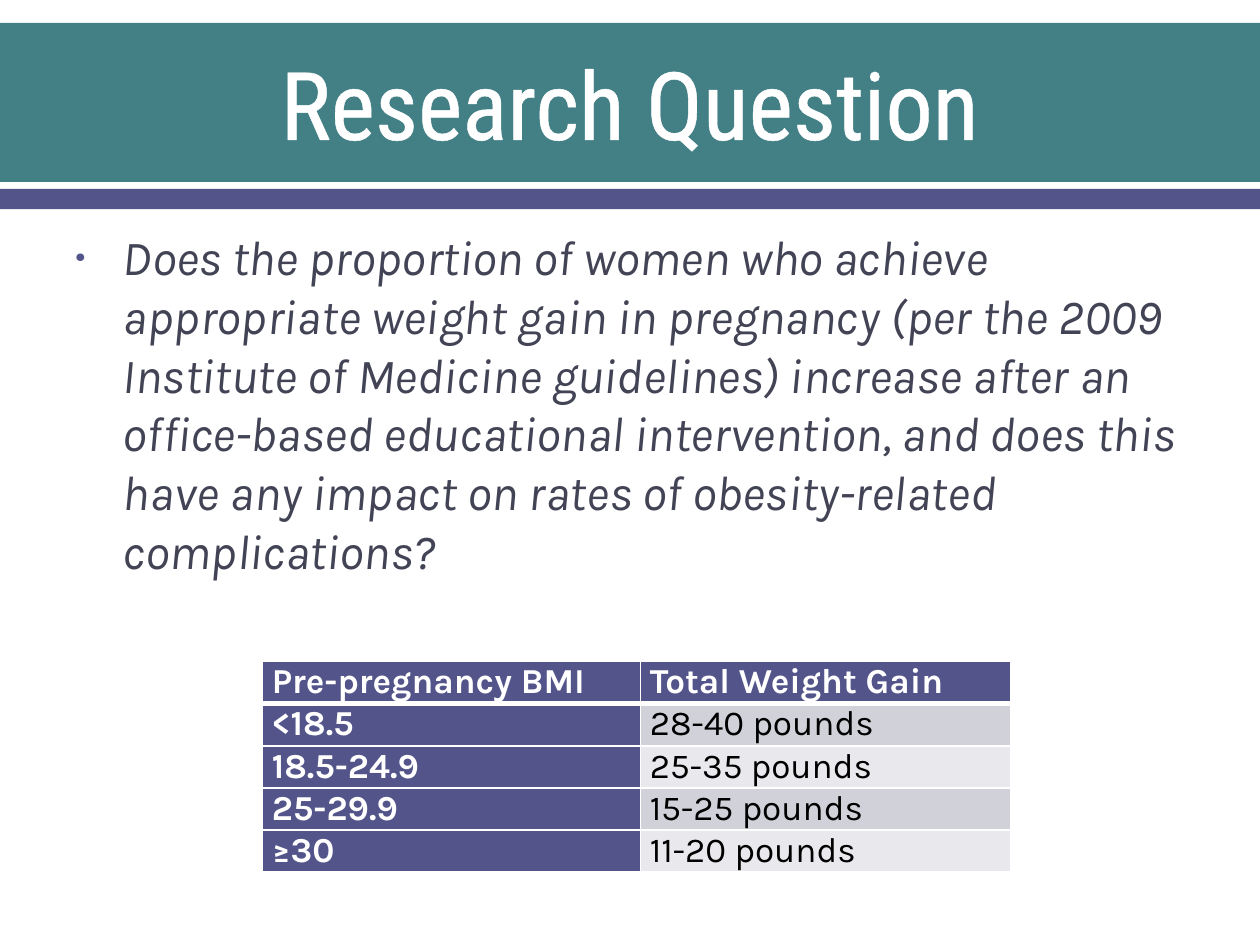
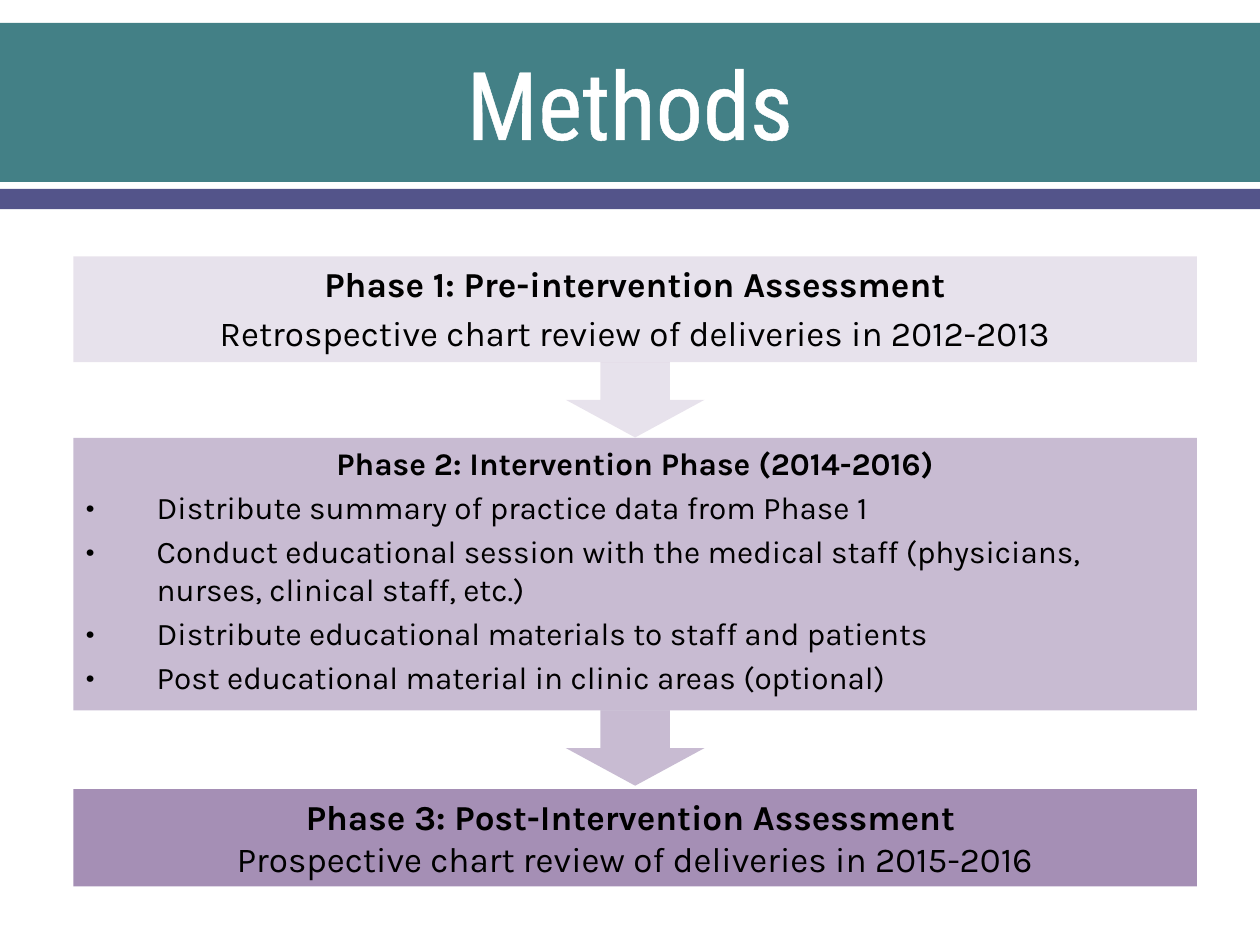
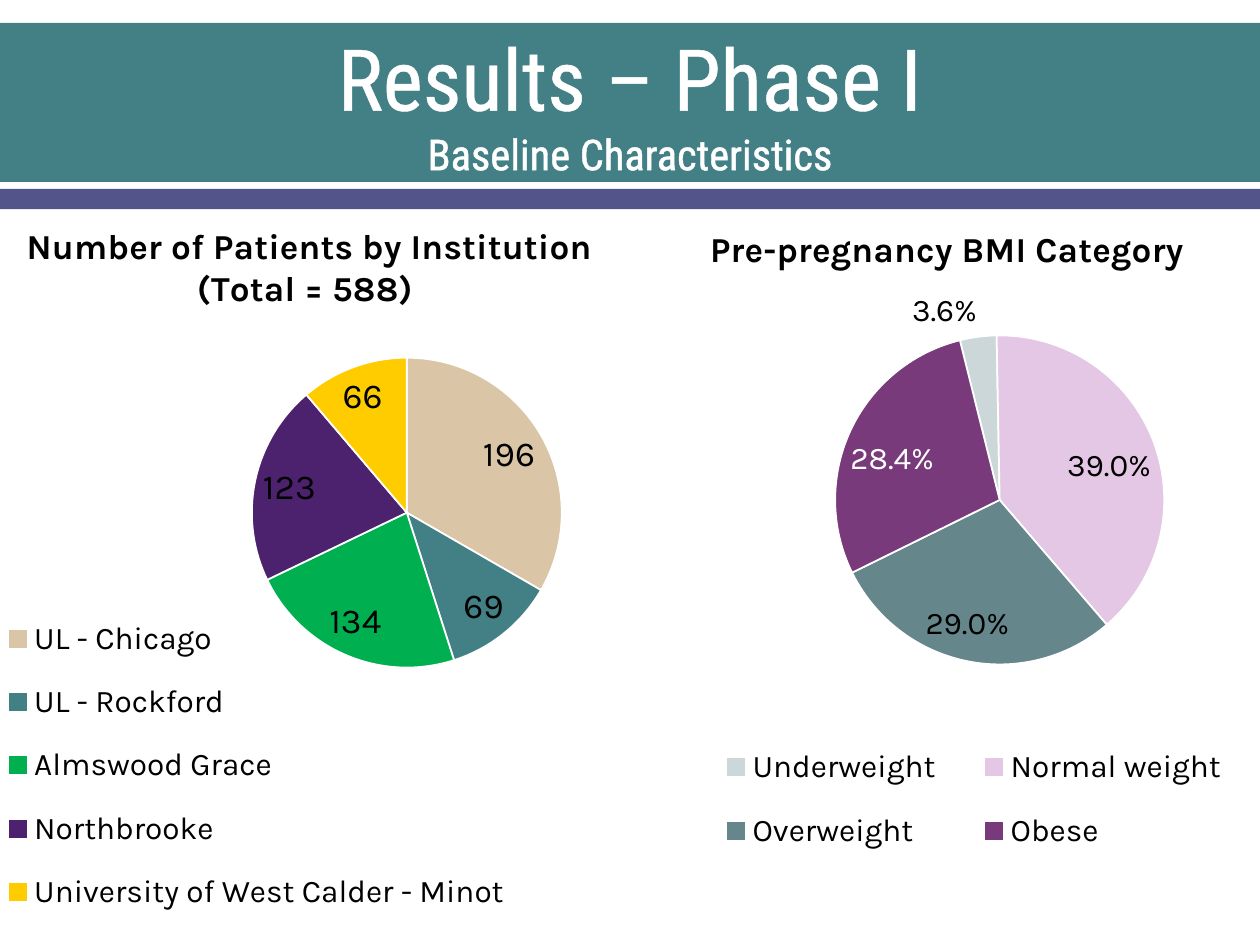
from pptx import Presentation
from pptx.chart.data import CategoryChartData
from pptx.dml.color import RGBColor
from pptx.enum.chart import XL_CHART_TYPE as ChartType
from pptx.enum.chart import XL_LABEL_POSITION as LabelPosition
from pptx.enum.chart import XL_LEGEND_POSITION as LegendPosition
from pptx.enum.shapes import MSO_SHAPE as Shape
from pptx.enum.text import MSO_ANCHOR as Anchor
from pptx.enum.text import PP_ALIGN as Align
from pptx.oxml import parse_xml
from pptx.oxml.ns import nsdecls, qn
from pptx.util import Cm, Pt

BODY_FONT = "Karla"
TITLE_FONT = "Roboto Condensed"

WHITE = RGBColor(0xFF, 0xFF, 0xFF)
BLACK = RGBColor(0x00, 0x00, 0x00)
TEAL = RGBColor(0x43, 0x80, 0x86)
INDIGO = RGBColor(0x53, 0x54, 0x8A)
SLATE = RGBColor(0x42, 0x44, 0x56)
ROW_DARK = RGBColor(0xD1, 0xD1, 0xDA)
ROW_LIGHT = RGBColor(0xE9, 0xE9, 0xED)
PURPLE = RGBColor(0x4C, 0x21, 0x6D)
SAND = RGBColor(0xDA, 0xC5, 0xA6)
GREEN = RGBColor(0x00, 0xB0, 0x50)
YELLOW = RGBColor(0xFF, 0xCC, 0x00)
DEEP_TEAL = RGBColor(0x32, 0x60, 0x65)
ORCHID = RGBColor(0xC9, 0x91, 0xCB)
PLUM = RGBColor(0x78, 0x3A, 0x7A)

SLIDE_WIDTH = 25.4
PHASE_LEFT = 1.48
PHASE_WIDTH = 22.65
ARROW_WIDTH = 2.8
ARROW_HEIGHT = 1.52


def set_fill(fill, color, opacity=100):
    fill.solid()
    fill.fore_color.rgb = color
    if opacity < 100:
        color_element = fill._xPr.find(f"{qn('a:solidFill')}/{qn('a:srgbClr')}")
        color_element.append(
            parse_xml(f'<a:alpha {nsdecls("a")} val="{opacity * 1000}"/>'))


def style_font(font, size, color=BLACK, bold=False, name=BODY_FONT):
    font.name = name
    font.size = Pt(size)
    font.bold = bold
    font.color.rgb = color


def add_run(paragraph, text, size, **style):
    run = paragraph.add_run()
    run.text = text
    style_font(run.font, size, **style)
    return run


def next_paragraph(frame):
    first = frame.paragraphs[0]
    return frame.add_paragraph() if first.runs else first


def set_bullet(paragraph, indent, color=BLACK, percent=100):
    properties = paragraph._p.get_or_add_pPr()
    properties.set("marL", str(Cm(indent)))
    properties.set("indent", str(-Cm(indent)))
    for xml in (
        f'<a:buClr {nsdecls("a")}><a:srgbClr val="{color}"/></a:buClr>',
        f'<a:buSzPct {nsdecls("a")} val="{percent * 1000}"/>',
        f'<a:buFont {nsdecls("a")} typeface="{BODY_FONT}"/>',
        f'<a:buChar {nsdecls("a")} char="•"/>',
    ):
        properties.append(parse_xml(xml))


def add_block(slide, kind, left, top, width, height, color, opacity=100):
    shape = slide.shapes.add_shape(
        kind, Cm(left), Cm(top), Cm(width), Cm(height))
    shape.shadow.inherit = False
    set_fill(shape.fill, color, opacity)
    shape.line.fill.background()
    return shape


def add_text_frame(slide, left, top, width, height):
    box = slide.shapes.add_textbox(Cm(left), Cm(top), Cm(width), Cm(height))
    box.text_frame.word_wrap = True
    return box.text_frame


def add_title_run(paragraph, text, size):
    run = add_run(paragraph, text, size, color=WHITE, name=TITLE_FONT)
    run.font._element.insert(0, parse_xml(
        f'<a:ln {nsdecls("a")} w="13970"><a:solidFill>'
        f'<a:srgbClr val="{WHITE}"/></a:solidFill></a:ln>'))


def add_titled_slide(presentation, title, size=54, subtitle=None):
    slide = presentation.slides.add_slide(presentation.slide_layouts[6])
    add_block(slide, Shape.RECTANGLE, 0, 0.46, SLIDE_WIDTH, 3.21, TEAL)
    add_block(slide, Shape.RECTANGLE, 0, 3.81, SLIDE_WIDTH, 0.41, INDIGO)
    frame = add_text_frame(slide, 1.27, 0.51, 22.86, 3.1)
    frame.vertical_anchor = Anchor.MIDDLE
    paragraph = frame.paragraphs[0]
    paragraph.alignment = Align.CENTER
    add_title_run(paragraph, title, size)
    if subtitle:
        paragraph.add_line_break()
        add_title_run(paragraph, subtitle, size / 2)
    return slide


def add_question(slide, text):
    frame = add_text_frame(slide, 1.27, 4.44, 22.86, 7.44)
    paragraph = frame.paragraphs[0]
    paragraph.space_before = Pt(5.6)
    set_bullet(paragraph, 0.96, INDIGO, 75)
    add_run(paragraph, text, 28, color=SLATE).font.italic = True


def set_borders(cell, bottom_width):
    properties = cell._tc.get_or_add_tcPr()
    widths = {"lnL": 1, "lnR": 1, "lnT": 1, "lnB": bottom_width}
    for index, (side, width) in enumerate(widths.items()):
        properties.insert(index, parse_xml(
            f'<a:{side} {nsdecls("a")} w="{Pt(width)}"><a:solidFill>'
            f'<a:srgbClr val="{WHITE}"/></a:solidFill></a:{side}>'))


def add_weight_table(slide, rows):
    column_widths = (7.62, 7.46)
    row_height = 0.84
    table = slide.shapes.add_table(
        len(rows), len(column_widths), Cm(5.29), Cm(13.34),
        Cm(sum(column_widths)), Cm(row_height * len(rows))).table
    for column, width in zip(table.columns, column_widths):
        column.width = Cm(width)
    for row_index, values in enumerate(rows):
        table.rows[row_index].height = Cm(row_height)
        for column_index, value in enumerate(values):
            cell = table.cell(row_index, column_index)
            heading = row_index == 0 or column_index == 0
            stripe = ROW_DARK if row_index % 2 else ROW_LIGHT
            set_fill(cell.fill, INDIGO if heading else stripe)
            set_borders(cell, 3 if row_index == 0 else 1)
            cell.margin_left = cell.margin_right = Cm(0.19)
            cell.margin_top = cell.margin_bottom = 0
            add_run(cell.text_frame.paragraphs[0], value, 20,
                    color=WHITE if heading else BLACK, bold=heading)


def add_phase(slide, top, height, opacity, size, heading,
              summary=None, summary_gap=0.2, bullets=()):
    box = add_block(slide, Shape.RECTANGLE, PHASE_LEFT, top,
                    PHASE_WIDTH, height, PURPLE, opacity)
    frame = box.text_frame
    frame.word_wrap = True
    frame.vertical_anchor = Anchor.TOP

    def add_line(text, gap=0.2, alignment=Align.CENTER, bold=False):
        paragraph = next_paragraph(frame)
        paragraph.alignment = alignment
        paragraph.space_before = Pt(size * gap)
        add_run(paragraph, text, size, bold=bold)
        return paragraph

    add_line(heading, bold=True)
    if summary:
        add_line(summary, summary_gap)
    for bullet in bullets:
        set_bullet(add_line(bullet, alignment=Align.LEFT), 1.43)


def add_phase_arrow(slide, top, opacity):
    left = PHASE_LEFT + (PHASE_WIDTH - ARROW_WIDTH) / 2
    add_block(slide, Shape.DOWN_ARROW, left, top,
              ARROW_WIDTH, ARROW_HEIGHT, PURPLE, opacity)


def set_layout(element, index, x, y, width=None, height=None, inner=False):
    old_layout = element.find(qn("c:layout"))
    if old_layout is not None:
        element.remove(old_layout)
    settings = [("layoutTarget", "inner")] if inner else []
    settings += [("xMode", "edge"), ("yMode", "edge"), ("x", x), ("y", y)]
    if width:
        settings += [("w", width), ("h", height)]
    values = "".join(f'<c:{tag} val="{value}"/>' for tag, value in settings)
    element.insert(index, parse_xml(
        f'<c:layout {nsdecls("c")}><c:manualLayout>{values}'
        f'</c:manualLayout></c:layout>'))


def add_pie(slide, place, title_lines, slices, number_format, label_size,
            title_place, plot_place, legend_place, start_angle=0):
    data = CategoryChartData(number_format=number_format)
    data.categories = [name for name, *_ in slices]
    data.add_series("Series 1", [value for _, value, *_ in slices])
    chart = slide.shapes.add_chart(
        ChartType.PIE, *(Cm(length) for length in place), data).chart
    style_font(chart.font, 18)
    chart_space = chart._chartSpace
    chart_space.find(qn("c:txPr")).addprevious(parse_xml(
        f'<c:spPr {nsdecls("c", "a")}><a:noFill/>'
        f'<a:ln><a:noFill/></a:ln></c:spPr>'))

    chart.has_title = True
    frame = chart.chart_title.text_frame
    for line in title_lines:
        add_run(next_paragraph(frame), line, 20, bold=True)
    set_layout(chart.chart_title._element, 1, *title_place)

    chart.has_legend = True
    chart.legend.position = LegendPosition.RIGHT
    chart.legend.include_in_layout = False
    style_font(chart.legend.font, 18)
    set_layout(chart.legend._element, 1, *legend_place)

    plot = chart.plots[0]
    plot.vary_by_categories = True
    series = plot.series[0]
    labels = series.data_labels
    labels.show_value = True
    labels.number_format = number_format
    labels.number_format_is_linked = False
    labels.position = LabelPosition.BEST_FIT
    style_font(labels.font, label_size)
    for index, (_, _, color, opacity) in enumerate(slices):
        point = series.points[index]
        set_fill(point.format.fill, color, opacity)
        point.format.line.color.rgb = WHITE
        point.format.line.width = Pt(1)
    plot._element.append(parse_xml(
        f'<c:firstSliceAng {nsdecls("c")} val="{start_angle}"/>'))
    set_layout(chart_space.find(f".//{qn('c:plotArea')}"), 0,
               *plot_place, inner=True)
    return series


def restyle_label(series, index, position, color):
    label = series.points[index].data_label
    style_font(label.font, 18, color)
    label.position = position


def build_question_slide(presentation):
    slide = add_titled_slide(presentation, "Research Question")
    add_question(
        slide,
        "Does the proportion of women who achieve appropriate weight gain in "
        "pregnancy (per the 2009 Institute of Medicine guidelines) increase "
        "after an office-based educational intervention, and does this have "
        "any impact on rates of obesity-related complications?")
    add_weight_table(slide, [
        ("Pre-pregnancy BMI", "Total Weight Gain"),
        ("<18.5", "28-40 pounds"),
        ("18.5-24.9", "25-35 pounds"),
        ("25-29.9", "15-25 pounds"),
        ("≥30", "11-20 pounds"),
    ])


def build_methods_slide(presentation):
    slide = add_titled_slide(presentation, "Methods")
    add_phase(slide, 5.17, 2.13, 13, 20,
              "Phase 1: Pre-intervention Assessment",
              "Retrospective chart review of deliveries in 2012-2013")
    add_phase(slide, 8.83, 5.49, 30, 18,
              "Phase 2: Intervention Phase (2014-2016)",
              bullets=(
                  "Distribute summary of practice data from Phase 1",
                  "Conduct educational session with the medical staff "
                  "(physicians, nurses, clinical staff, etc.)",
                  "Distribute educational materials to staff and patients",
                  "Post educational material in clinic areas (optional)",
              ))
    add_phase(slide, 15.91, 1.96, 50, 20,
              "Phase 3: Post-Intervention Assessment ",
              "Prospective chart review of deliveries in 2015-2016",
              summary_gap=0)
    add_phase_arrow(slide, 5.17 + 2.13, 13)
    add_phase_arrow(slide, 8.83 + 5.49, 30)


def build_results_slide(presentation):
    slide = add_titled_slide(presentation, "Results – Phase I", 48.6,
                             "Baseline Characteristics")
    add_pie(
        slide, (0.08, 4.23, 14.53, 14.66),
        ("Number of Patients by Institution", "(Total = 588) "),
        [
            ("UL - Chicago", 196, SAND, 100),
            ("UL - Rockford", 69, TEAL, 100),
            ("Almswood Grace", 134, GREEN, 100),
            ("Northbrooke", 123, PURPLE, 100),
            ("University of West Calder - Minot", 66, YELLOW, 100),
        ],
        "General", 20,
        title_place=(0.026, 0.015),
        plot_place=(0.344, 0.203, 0.43, 0.427),
        legend_place=(0, 0.528, 0.7, 0.472))
    bmi_series = add_pie(
        slide, (12.7, 4.23, 14.6, 14.81),
        ("Pre-pregnancy BMI Category",),
        [
            ("Underweight", 0.036, DEEP_TEAL, 25),
            ("Normal weight", 0.39, ORCHID, 50),
            ("Overweight", 0.29, DEEP_TEAL, 75),
            ("Obese", 0.284, PLUM, 100),
        ],
        "0.0%", 18,
        title_place=(0.102, 0.013),
        plot_place=(0.283, 0.171, 0.455, 0.448),
        legend_place=(0.08, 0.697, 0.79, 0.21),
        start_angle=346)
    restyle_label(bmi_series, 0, LabelPosition.OUTSIDE_END, BLACK)
    restyle_label(bmi_series, 3, LabelPosition.BEST_FIT, WHITE)


def main():
    presentation = Presentation()
    presentation.slide_width = Cm(SLIDE_WIDTH)
    presentation.slide_height = Cm(19.05)
    build_question_slide(presentation)
    build_methods_slide(presentation)
    build_results_slide(presentation)
    presentation.save("out.pptx")


if __name__ == "__main__":
    main()
